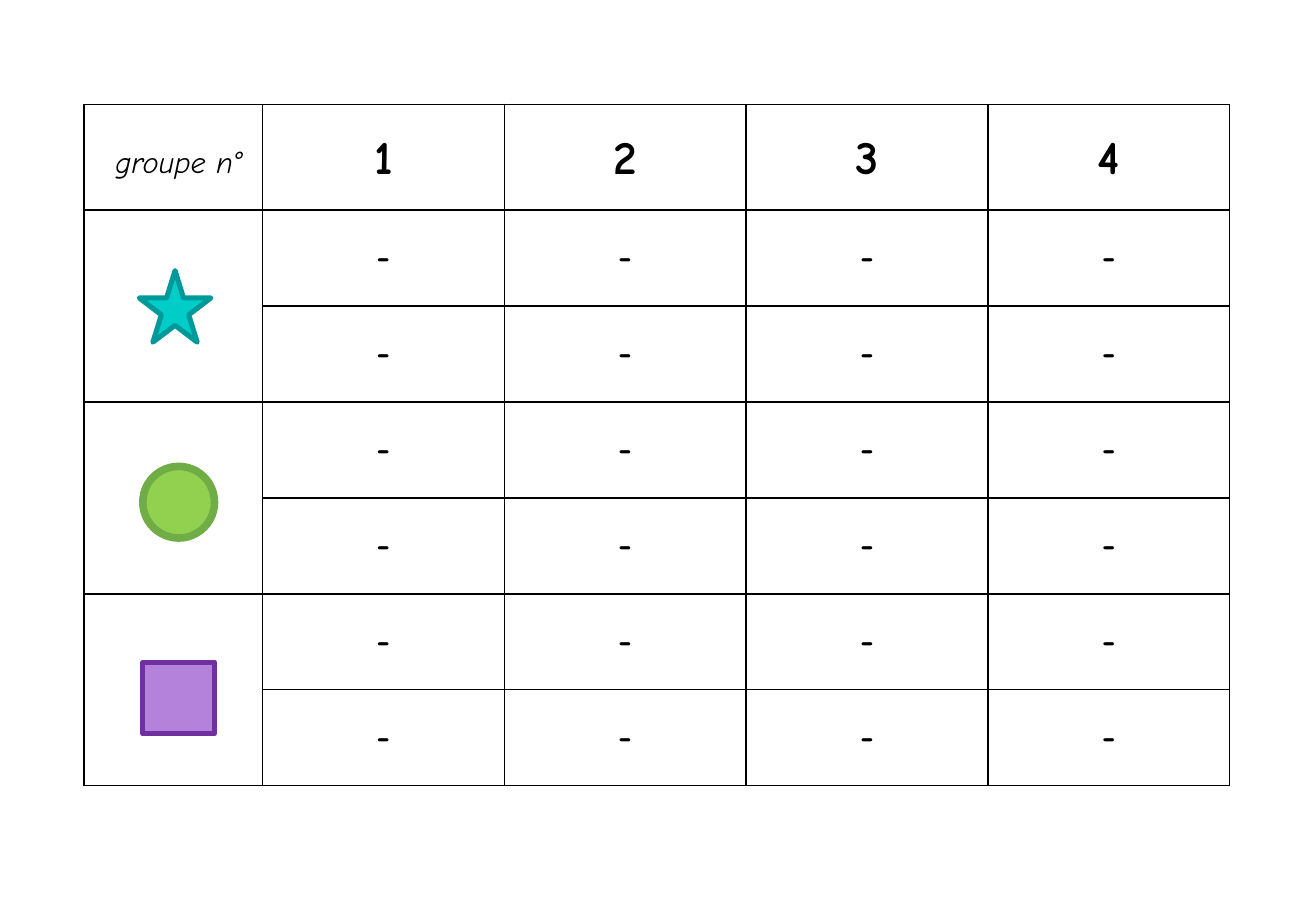
from dataclasses import dataclass
from typing import Any

import pptx
import pptx.dml.color
import pptx.enum.shapes
import pptx.enum.text
import pptx.oxml
import pptx.oxml.ns
import pptx.util

WIDE, HIGH = 10.83, 7.5
LEFT, TOP = 0.69, 0.86
SIDE, COL = 1.47, 1.99
HEAD, ROW = 0.87, 0.79
COLS, ROWS = 4, 6
TOKEN = 0.59
FONT = "Comic Neue"
MID = pptx.enum.text.MSO_ANCHOR.MIDDLE
CENTER = pptx.enum.text.PP_ALIGN.CENTER
KIND = pptx.enum.shapes.MSO_SHAPE


@dataclass
class Run:
    text: str
    size: int
    name: str = FONT
    color: str = "000000"
    bold: bool = True
    italic: bool = False


@dataclass
class Token:
    """A group symbol: col in side columns, row in body rows."""
    kind: Any
    col: float
    row: float
    fill: str
    line: str
    width: float


TOKENS = [
    Token(KIND.OVAL, 0.33, 2.67, "92D050", "70AD47", 4.5),
    Token(KIND.RECTANGLE, 0.33, 4.71, "B482DA", "7030A0", 3),
    Token(KIND.STAR_5_POINT, 0.31, 0.63, "00CDC8", "009999", 3),
]
LABEL = [
    Run(" ", 28, "Calibri", "808080"),
    Run("groupe n°", 18, bold=False, italic=True),
]


def inch(value: float) -> int:
    return pptx.util.Inches(value)


def paint(fill: Any, color: str) -> None:
    fill.solid()
    fill.fore_color.rgb = pptx.dml.color.RGBColor.from_string(color)


def style(item: Any, form: dict[str, Any]) -> None:
    for key, value in form.items():
        setattr(item, key, value)


def frame(cell: Any) -> None:
    """Give the cell thin black borders and a white fill."""
    props = cell._tc.get_or_add_tcPr()
    space = pptx.oxml.ns.nsdecls("a")
    for side in "LRTB":
        props.append(pptx.oxml.parse_xml(
            f'<a:ln{side} {space} w="12700"><a:solidFill>'
            f'<a:srgbClr val="000000"/></a:solidFill></a:ln{side}>'))
    paint(cell.fill, "FFFFFF")


def write(cell: Any, runs: list[Run], space: float = 1) -> None:
    para = cell.text_frame.paragraphs[0]
    style(para, {"alignment": CENTER, "line_spacing": space})
    for item in runs:
        run = para.add_run()
        run.text = item.text
        style(run.font, {"size": pptx.util.Pt(item.size), "name": item.name,
                         "bold": item.bold, "italic": item.italic})
        paint(run.font.fill, item.color)


def build(slide: Any) -> None:
    """Draw the table of groups."""
    table = slide.shapes.add_table(
        ROWS + 1, COLS + 1, inch(LEFT), inch(TOP),
        inch(SIDE + COLS * COL), inch(HEAD + ROWS * ROW)).table
    style(table, {"first_row": False, "horz_banding": False})
    for num, col in enumerate(table.columns):
        col.width = inch(COL if num else SIDE)
    for num, row in enumerate(table.rows):
        row.height = inch(ROW if num else HEAD)
        for pos, cell in enumerate(row.cells):
            frame(cell)
            cell.vertical_anchor = MID
            if num == 0:
                style(cell, {"margin_left": inch(0.07), "margin_top": 0,
                             "margin_right": inch(0.07), "margin_bottom": 0})
                if pos:
                    write(cell, [Run(str(pos), 28)], 1.07)
                else:
                    write(cell, LABEL)
            elif pos:
                write(cell, [Run("-", 20)])
    for num in range(1, ROWS, 2):
        table.cell(num, 0).merge(table.cell(num + 1, 0))


def draw(slide: Any, token: Token) -> None:
    shape = slide.shapes.add_shape(
        token.kind, inch(LEFT + token.col * SIDE),
        inch(TOP + HEAD + token.row * ROW), inch(TOKEN), inch(TOKEN))
    shape.shadow.inherit = False
    paint(shape.fill, token.fill)
    paint(shape.line.fill, token.line)
    shape.line.width = pptx.util.Pt(token.width)


def main() -> None:
    deck = pptx.Presentation()
    style(deck, {"slide_width": inch(WIDE), "slide_height": inch(HIGH)})
    slide = deck.slides.add_slide(deck.slide_layouts[6])
    build(slide)
    for token in TOKENS:
        draw(slide, token)
    deck.save("out.pptx")


if __name__ == "__main__":
    main()
